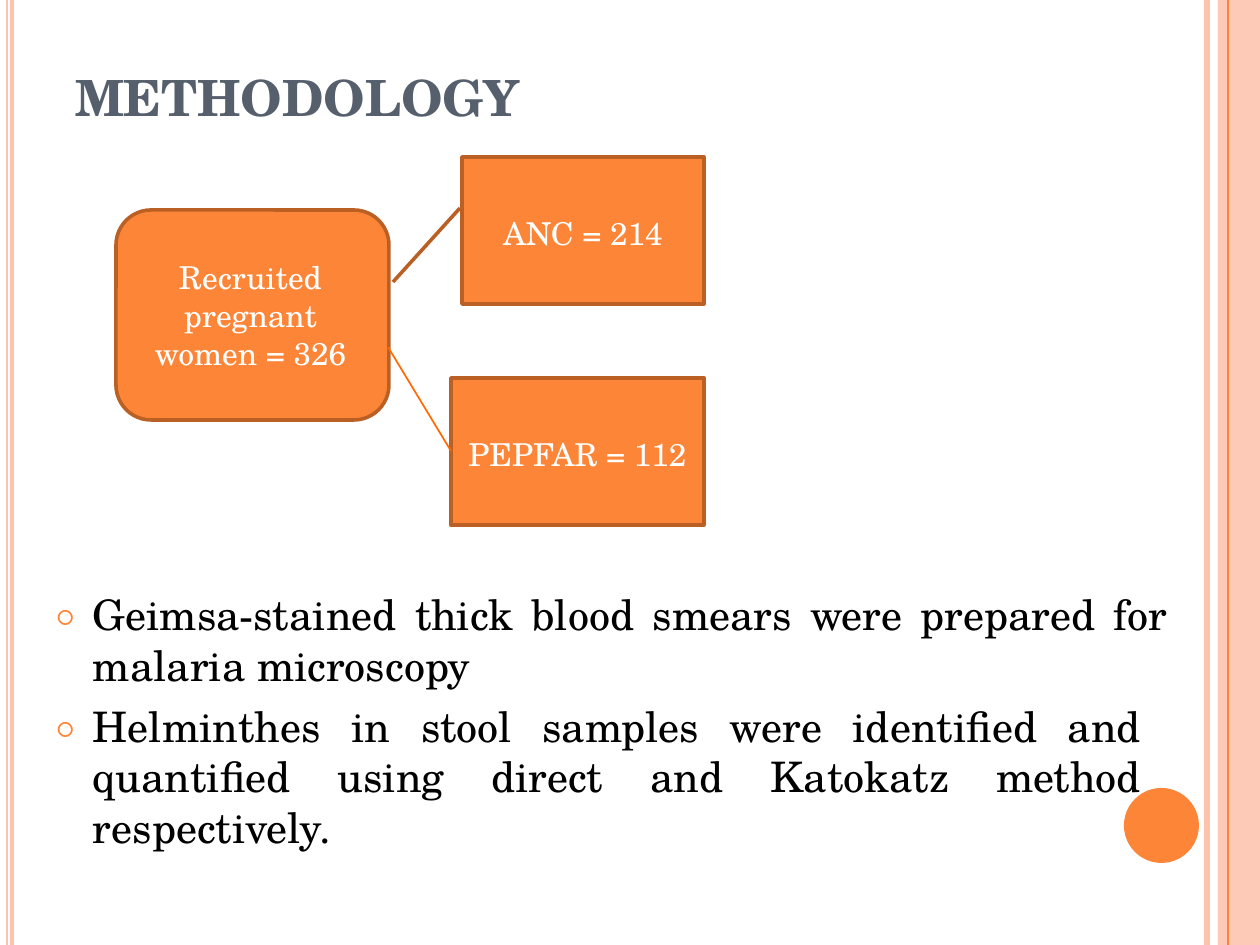
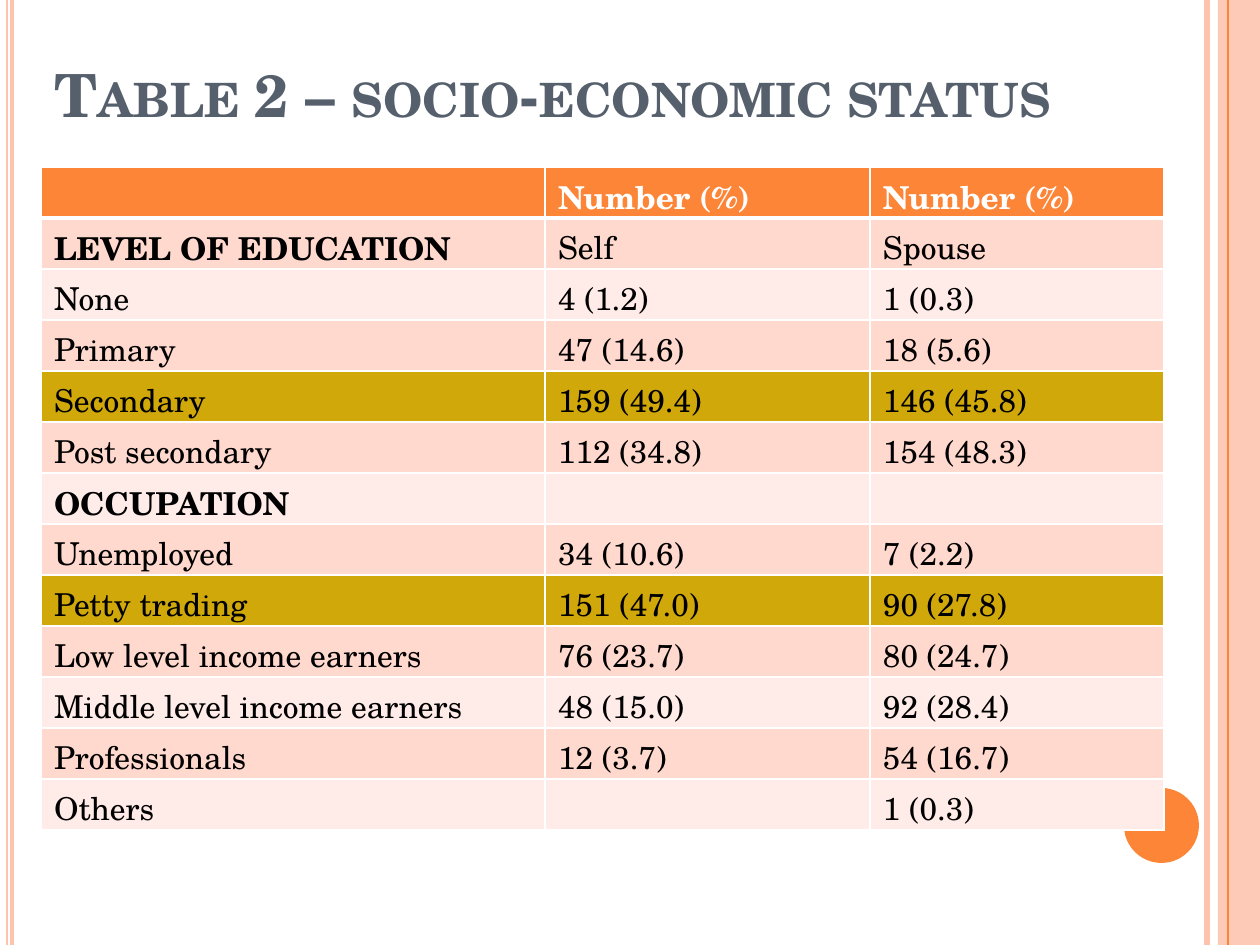
from lxml.etree import SubElement as Sub
from pptx import Presentation
from pptx.dml.color import RGBColor as RGB
from pptx.enum.shapes import MSO_CONNECTOR as Line, MSO_SHAPE as Form
from pptx.enum.text import MSO_ANCHOR as Anchor, PP_ALIGN as Align
from pptx.oxml.ns import qn
from pptx.util import Emu, Pt

FACE = "TeX Gyre Schola"
HUES = {
    "white": "FFFFFF", "black": "000000", "slate": "565F6C",
    "orange": "FD8537", "peach": "FDC3AD", "rust": "BA6025",
    "flame": "FF6903", "rose": "FFD9CE", "blush": "FFECE8", "gold": "D0A809",
}
WIDE, HIGH = 1260, 945

RAILS = [
    (1207, "peach", 3),
    (12, "peach", 2.75),
    (7, "peach", 0.91),
]
BAND = (1218, 0, 42, HIGH)
EDGE = (1228, "orange", 0.72)
DISC = (1124, 788, 75, 75)

METHOD = ((75, 67, 900, 65), [("METHODOLOGY", 28.5)])
STATUS = ((55, 58, 1110, 75), [
    ("T", 34), ("ABLE ", 27), ("2 – ", 34), ("SOCIO", 27),
    ("-", 34), ("ECONOMIC STATUS", 27),
])

NODES = [
    (Form.ROUNDED_RECTANGLE, (116, 210, 273, 210), (22, 0, 26),
     "Recruited pregnant women = 326"),
    (Form.RECTANGLE, (462, 157, 242, 147), (0, 4, 0), "ANC = 214"),
    (Form.RECTANGLE, (451, 378, 253, 147), (0, 4, 0), "PEPFAR = 112"),
]
LINKS = [
    ((393, 282, 460, 208), "rust", 2.04),
    ((388, 347, 451, 451), "flame", 0.96),
]
NOTES = (54, 589, 1123, 265)
STEPS = [
    ("Geimsa-stained thick blood smears were prepared for malaria microscopy", 0, 10),
    ("Helminthes in stool samples were identified and quantified using "
     "direct and Katokatz method respectively.", 6, 36),
]

GRID = (41, 167)
COLS = [504, 325, 294]
ROW = 51
MARKED = {"Secondary", "Petty trading"}
ROWS = [
    ("", "Number (%)", "Number (%)"),
    ("LEVEL OF EDUCATION", "Self", "Spouse"),
    ("None", "4 (1.2)", "1 (0.3)"),
    ("Primary", "47 (14.6)", "18 (5.6)"),
    ("Secondary", "159 (49.4)", "146 (45.8)"),
    ("Post secondary", "112 (34.8)", "154 (48.3)"),
    ("OCCUPATION", "", ""),
    ("Unemployed", "34 (10.6)", "7 (2.2)"),
    ("Petty trading", "151 (47.0)", "90 (27.8)"),
    ("Low level income earners", "76 (23.7)", "80 (24.7)"),
    ("Middle level income earners", "48 (15.0)", "92 (28.4)"),
    ("Professionals", "12 (3.7)", "54 (16.7)"),
    ("Others", "", "1 (0.3)"),
]


def px(n):
    return Emu(round(n * 914400 / 126))


def put(item, **vals):
    for name, val in vals.items():
        setattr(item, name, val)


def hue(name):
    return RGB.from_string(HUES[name])


def paint(fill, name):
    fill.solid()
    fill.fore_color.rgb = hue(name)


def pad(item, left=0, top=0, right=0, bottom=0):
    put(item, margin_left=px(left), margin_top=px(top),
        margin_right=px(right), margin_bottom=px(bottom))


def write(para, text, size, tone, bold=False):
    run = para.add_run()
    run.text = text
    put(run.font, name=FACE, size=Pt(size), bold=bold)
    run.font.color.rgb = hue(tone)


def shape(slide, form, box, fill, edge=None):
    item = slide.shapes.add_shape(form, *map(px, box))
    item.shadow.inherit = False
    paint(item.fill, fill)
    if edge:
        paint(item.line.fill, edge)
        item.line.width = Pt(2.04)
    else:
        item.line.fill.background()
    return item


def join(slide, ends, tone, width):
    item = slide.shapes.add_connector(Line.STRAIGHT, *map(px, ends))
    paint(item.line.fill, tone)
    item.line.width = Pt(width)
    Sub(item._element.spPr, qn("a:effectLst"))


def rail(slide, x, tone, width):
    join(slide, (x, 0, x, HIGH), tone, width)


def area(slide, box):
    frame = slide.shapes.add_textbox(*map(px, box)).text_frame
    frame.word_wrap = True
    pad(frame)
    return frame


def start(deck, title):
    slide = deck.slides.add_slide(deck.slide_layouts[6])
    for spot in RAILS:
        rail(slide, *spot)
    band = shape(slide, Form.RECTANGLE, BAND, "peach")
    tint = next(band._element.spPr.iter(qn("a:srgbClr")))
    Sub(tint, qn("a:alpha"), val="87000")
    rail(slide, *EDGE)
    shape(slide, Form.OVAL, DISC, "orange")
    box, runs = title
    para = area(slide, box).paragraphs[0]
    for text, size in runs:
        write(para, text, size, "slate", True)
    return slide


def bullet(para, right):
    props = para._p.get_or_add_pPr()
    for key, val in {"marL": 39, "indent": -38, "marR": right}.items():
        props.set(key, str(px(val)))
    Sub(Sub(props, qn("a:buClr")), qn("a:srgbClr"), val=HUES["orange"])
    Sub(props, qn("a:buSzPct"), val="69000")
    Sub(props, qn("a:buFont"), typeface=FACE)
    Sub(props, qn("a:buChar"), char="○")


def flow(deck):
    slide = start(deck, METHOD)
    for form, box, room, text in NODES:
        frame = shape(slide, form, box, "orange", "rust").text_frame
        put(frame, word_wrap=True, vertical_anchor=Anchor.MIDDLE)
        pad(frame, *room)
        para = frame.paragraphs[0]
        para.alignment = Align.CENTER
        write(para, text, 18, "white")
    for link in LINKS:
        join(slide, *link)
    frame = area(slide, NOTES)
    for i, (text, gap, right) in enumerate(STEPS):
        para = frame.add_paragraph() if i else frame.paragraphs[0]
        bullet(para, right)
        put(para, alignment=Align.JUSTIFY, space_before=Pt(gap))
        write(para, text, 24, "black")


def frame_cell(cell, row):
    props = cell._tc.get_or_add_tcPr()
    thick = {("lnB", 0), ("lnT", 1)}
    for side in ("lnL", "lnR", "lnT", "lnB"):
        width = Pt(3 if (side, row) in thick else 1)
        line = Sub(props, qn("a:" + side), w=str(width))
        Sub(Sub(line, qn("a:solidFill")), qn("a:srgbClr"), val=HUES["white"])


def shade(row, label):
    if row == 0:
        return "orange"
    if label in MARKED:
        return "gold"
    return "rose" if row % 2 else "blush"


def status(deck):
    slide = start(deck, STATUS)
    size = (sum(COLS), ROW * len(ROWS))
    table = slide.shapes.add_table(len(ROWS), len(COLS), *map(px, GRID + size)).table
    put(table, first_row=False, horz_banding=False)
    for col, width in zip(table.columns, COLS):
        col.width = px(width)
    for r, vals in enumerate(ROWS):
        table.rows[r].height = px(ROW)
        for c, text in enumerate(vals):
            cell = table.cell(r, c)
            pad(cell, 13, 6)
            frame_cell(cell, r)
            paint(cell.fill, shade(r, vals[0]))
            if text:
                bold = r == 0 or text.isupper()
                write(cell.text_frame.paragraphs[0], text, 18,
                      "black" if r else "white", bold)


def main():
    deck = Presentation()
    put(deck, slide_width=px(WIDE), slide_height=px(HIGH))
    flow(deck)
    status(deck)
    deck.save("out.pptx")


if __name__ == "__main__":
    main()
